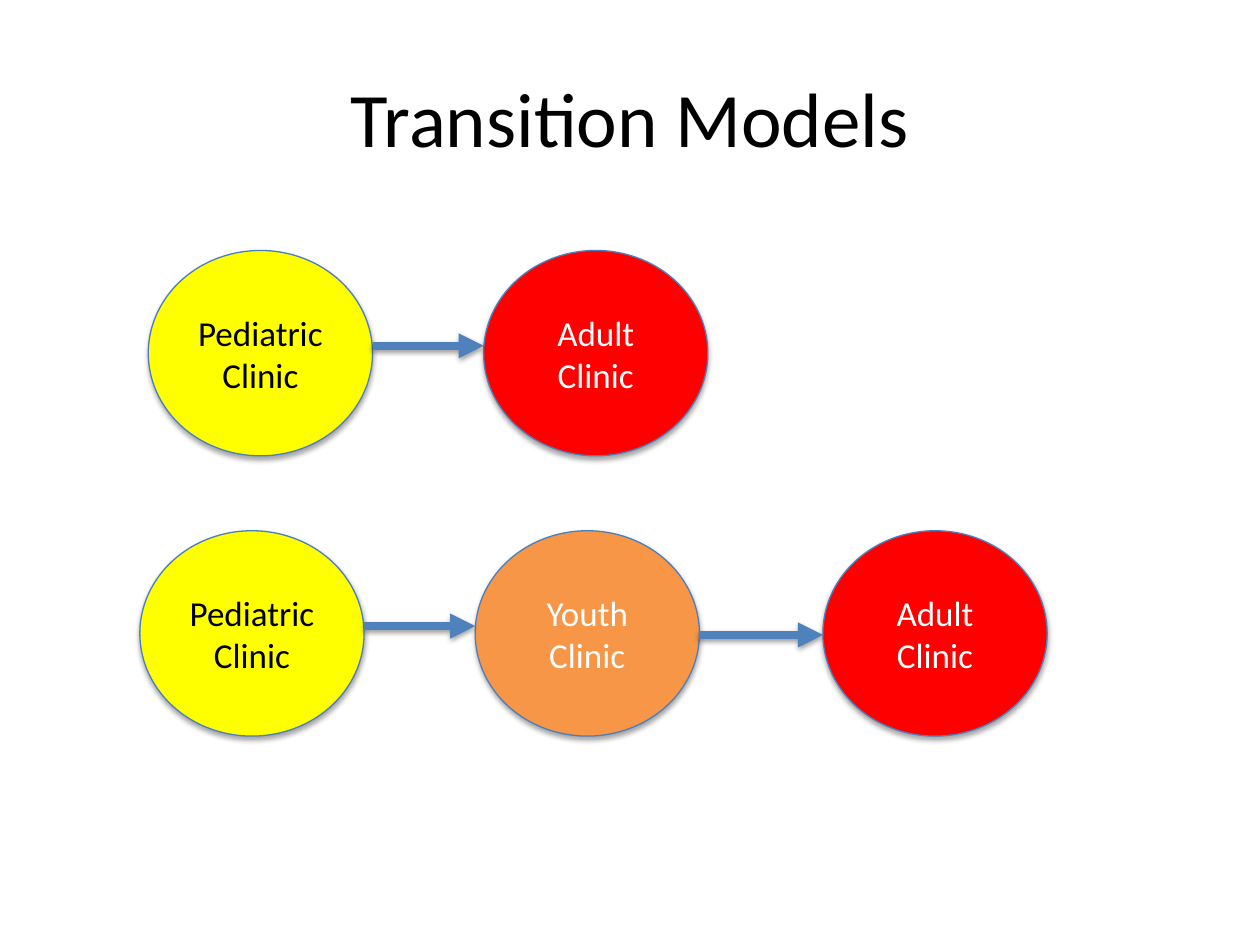
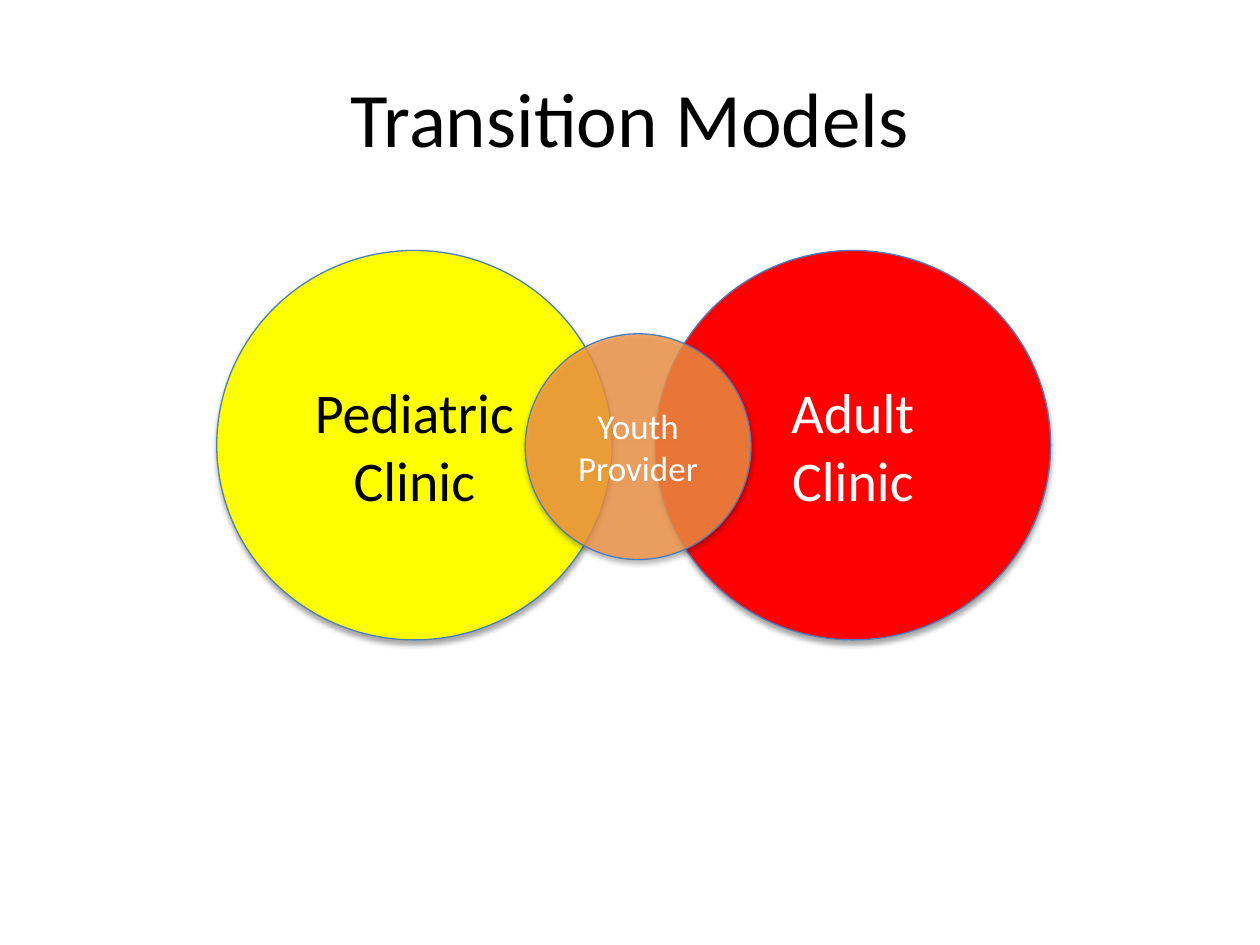
from dataclasses import dataclass

from pptx import Presentation
from pptx.dml.color import RGBColor
from pptx.enum import shapes, text
from pptx.oxml.ns import qn
from pptx.util import Cm, Pt
from lxml import etree


@dataclass(frozen=True)
class Theme:
    font: str = "Calibri"
    title_size: int = 44
    large: int = 32
    small: int = 20
    black: str = "000000"
    white: str = "FFFFFF"
    pediatric: str = "FFFF00"
    youth: str = "F79646"
    adult: str = "FF0000"
    outline: str = "4B7EBC"
    arrow: str = "4F81BD"
    outline_width: float = 0.75
    arrow_width: float = 4.75


THEME = Theme()
TITLE = "Transition Models"


# Shared helpers
def rgb(value):
    return RGBColor.from_string(value)


def sub(parent, tag, **attrs):
    return etree.SubElement(parent, qn(tag), {k: str(v) for k, v in attrs.items()})


def set_text(sp, words, size, color):
    tf = sp.text_frame
    tf.word_wrap = True
    tf.vertical_anchor = text.MSO_ANCHOR.MIDDLE
    p = tf.paragraphs[0]
    p.alignment = text.PP_ALIGN.CENTER
    r = p.add_run()
    r.text = words
    r.font.name = THEME.font
    r.font.size = Pt(size)
    r.font.color.rgb = rgb(color)


def add_shadow(sp, distance, opacity):
    """Give a shape or connector a soft shadow straight below it."""
    effects = sub(sp._element.spPr, "a:effectLst")
    shadow = sub(effects, "a:outerShdw", blurRad=Pt(3.1), dist=Pt(distance),
                 dir=90 * 60000, rotWithShape=0)
    color = sub(shadow, "a:srgbClr", val=THEME.black)
    sub(color, "a:alpha", val=opacity * 1000)


def add_circle(parent, words, box, fill, color=THEME.white, size=THEME.small, opacity=100):
    sp = parent.shapes.add_shape(shapes.MSO_SHAPE.OVAL, *map(Cm, box))
    sp.fill.solid()
    sp.fill.fore_color.rgb = rgb(fill)
    if opacity < 100:
        fill_color = sp._element.spPr.find(qn("a:solidFill"))[0]
        sub(fill_color, "a:alpha", val=opacity * 1000)
    sp.line.color.rgb = rgb(THEME.outline)
    sp.line.width = Pt(THEME.outline_width)
    add_shadow(sp, 1.8, 35)
    set_text(sp, words, size, color)


def add_arrow(parent, x1, x2, y):
    line = parent.shapes.add_connector(
        shapes.MSO_CONNECTOR.STRAIGHT, Cm(x1), Cm(y), Cm(x2), Cm(y))
    line.line.color.rgb = rgb(THEME.arrow)
    line.line.width = Pt(THEME.arrow_width)
    sub(line.line._get_or_add_ln(), "a:tailEnd", type="triangle")
    add_shadow(line, 1.6, 38)


def add_titled_slide(prs):
    s = prs.slides.add_slide(prs.slide_layouts[5])
    set_text(s.shapes.title, TITLE, THEME.title_size, THEME.black)
    return s


# Row of clinics joined by arrows
def add_clinic_row(s, left, top, clinics, offsets, arrow_offsets):
    width, height = 4.52, 4.14
    group = s.shapes.add_group_shape()
    for (words, fill, color), dx in zip(clinics, offsets):
        add_circle(group, words, (left + dx, top, width, height), fill, color)
    for start, end, dy in zip(offsets, offsets[1:], arrow_offsets):
        add_arrow(group, left + start + width, left + end, top + dy)


def build_sequence_slide(prs):
    s = add_titled_slide(prs)
    pediatric = ("Pediatric Clinic", THEME.pediatric, THEME.black)
    youth = ("Youth Clinic", THEME.youth, THEME.white)
    adult = ("Adult Clinic", THEME.adult, THEME.white)
    add_clinic_row(s, 2.99, 5.05, [pediatric, adult], [0, 6.76], [1.92])
    add_clinic_row(s, 2.82, 10.7, [pediatric, youth, adult], [0, 6.76, 13.77], [1.92, 2.1])


# Two clinics overlapped by a shared provider
def add_overlap(s, left, top):
    width, height, provider = 7.97, 7.85, 4.55
    add_circle(s, "Adult Clinic", (left + 8.84, top, width, height),
               THEME.adult, size=THEME.large)
    add_circle(s, "Pediatric Clinic", (left, top, width, height),
               THEME.pediatric, THEME.black, THEME.large)
    add_circle(s, "Youth Provider", (left + 6.22, top + 1.68, provider, provider),
               THEME.youth, opacity=78)


def build_overlap_slide(prs):
    add_overlap(add_titled_slide(prs), 4.37, 5.05)


def main():
    prs = Presentation()
    prs.slide_width, prs.slide_height = Cm(25.4), Cm(19.05)
    build_sequence_slide(prs)
    build_overlap_slide(prs)
    prs.save("out.pptx")


if __name__ == "__main__":
    main()
